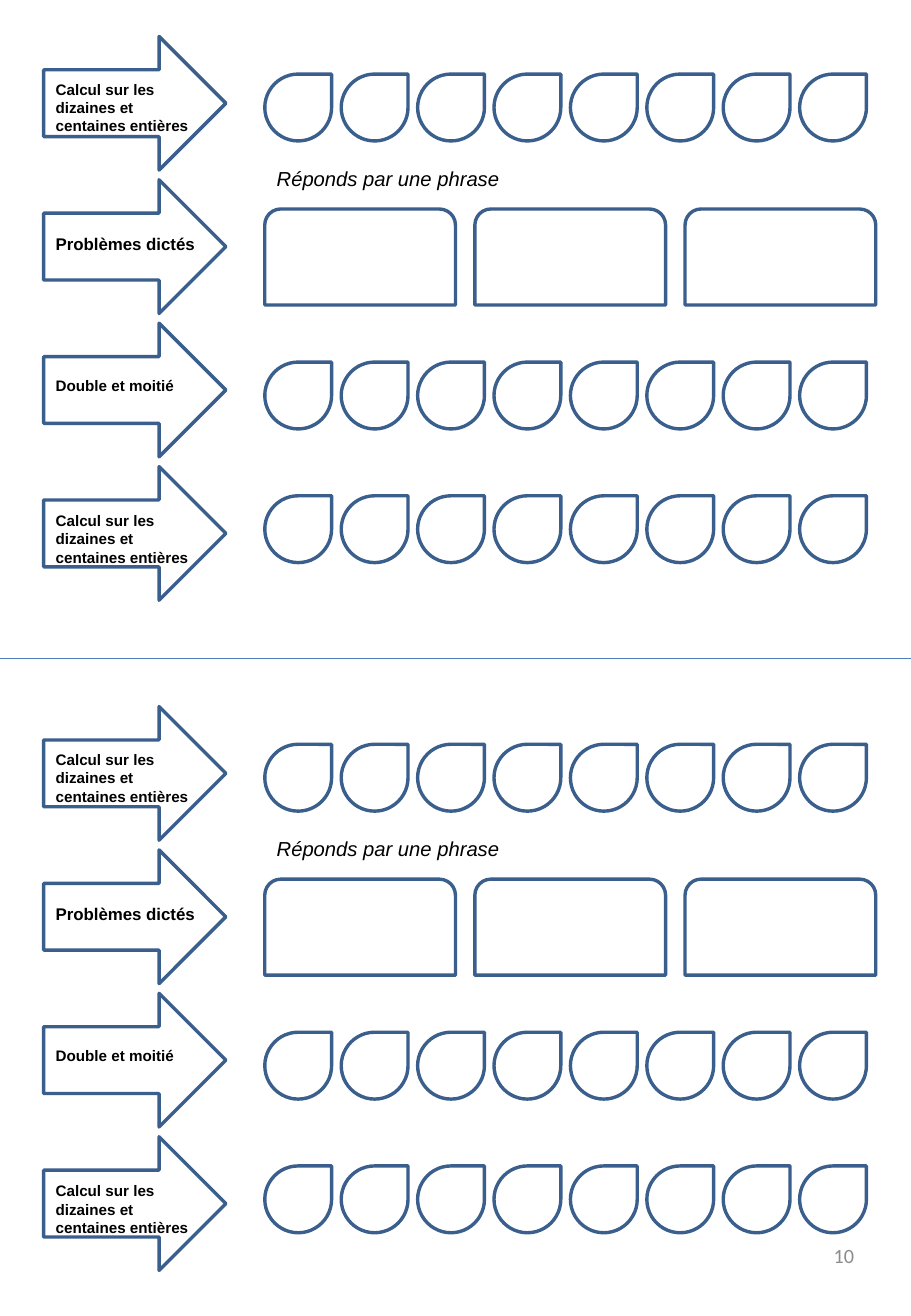
"""Build a mental arithmetic answer sheet with two identical halves."""
from dataclasses import dataclass
from lxml import etree
from pptx import Presentation
from pptx import util as u
from pptx.dml.color import RGBColor
from pptx.enum import shapes, text
from pptx.oxml.ns import qn

SUMS = "Calcul sur les dizaines et centaines entières"
LABELS = [
    (SUMS, 0.61, 1.42, 0.56, 9),
    ("Problèmes dictés", 1.87, 1.5, 0.27, 10),
    ("Double et moitié", 3.05, 1.42, 0.25, 9),
    (SUMS, 4.16, 1.42, 0.56, 9),
]
HINT = "Réponds par une phrase"
PAGE = "10"
DROPS = [0.61, 2.98, 4.08]
HALVES = [0, 5.515]
LEFT, RIGHT = 0.36, 2.18


@dataclass
class Theme:
    """Hold colours, fonts and sizes."""
    edge: str = "3A5F8C"
    rule: str = "4B7EBC"
    ink: str = "000000"
    grey: str = "8C8C8C"
    font: str = "Arial"
    foot: str = "Calibri"
    size: int = 12
    thick: float = 2
    thin: float = 0.75


T = Theme()
KIND = shapes.MSO_SHAPE


def rgb(code):
    """Return a colour."""
    return RGBColor.from_string(code)


def box(slide, kind, *area):
    """Add an unfilled outlined shape."""
    shape = slide.shapes.add_shape(kind, *map(u.Inches, area))
    shape.shadow.inherit = False
    shape.fill.background()
    shape.line.color.rgb = rgb(T.edge)
    shape.line.width = u.Pt(T.thick)


def write(slide, words, area, size, font=T.font, ink=T.ink, bold=False, slant=False):
    """Add a wrapped text box and return its frame."""
    frame = slide.shapes.add_textbox(*map(u.Inches, area)).text_frame
    frame.word_wrap = True
    frame.text = words
    face = frame.paragraphs[0].runs[0].font
    face.name, face.size = font, u.Pt(size)
    face.bold, face.italic = bold, slant
    face.color.rgb = rgb(ink)
    return frame


def half(slide, top):
    """Draw one half of the sheet."""
    for row in range(len(LABELS)):
        box(slide, KIND.RIGHT_ARROW, LEFT, top + 0.3 + row * 1.18, 1.5, 1.1)
    for y in DROPS:
        for col in range(8):
            box(slide, KIND.TEAR, RIGHT + col * 0.629, top + y, 0.55, 0.55)
    for col in range(3):
        box(slide, KIND.ROUND_2_SAME_RECTANGLE, RIGHT + col * 1.73, top + 1.72, 1.57, 0.79)
    for words, y, wide, high, size in LABELS:
        frame = write(slide, words, (LEFT, top + y, wide, high), size, bold=True)
        frame.auto_size = text.MSO_AUTO_SIZE.SHAPE_TO_FIT_TEXT
    frame = write(slide, HINT, (RIGHT, top + 1.32, 5.04, 0.3), T.size, slant=True)
    frame.auto_size = text.MSO_AUTO_SIZE.SHAPE_TO_FIT_TEXT


def main():
    """Build and save the sheet."""
    deck = Presentation()
    deck.slide_width, deck.slide_height = u.Inches(7.5), u.Inches(10.83)
    slide = deck.slides.add_slide(deck.slide_layouts[6])
    ends = map(u.Inches, (0, 5.42, 7.5, 5.42))
    rule = slide.shapes.add_connector(shapes.MSO_CONNECTOR.STRAIGHT, *ends)
    rule.line.color.rgb = rgb(T.rule)
    rule.line.width = u.Pt(T.thin)
    etree.SubElement(rule.element.spPr, qn("a:effectLst"))
    for top in HALVES:
        half(slide, top)
    frame = write(slide, PAGE, (5.38, 10.04, 1.75, 0.58), T.size, T.foot, T.grey)
    frame.vertical_anchor = text.MSO_ANCHOR.MIDDLE
    frame.paragraphs[0].alignment = text.PP_ALIGN.RIGHT
    deck.save("out.pptx")


if __name__ == "__main__":
    main()
